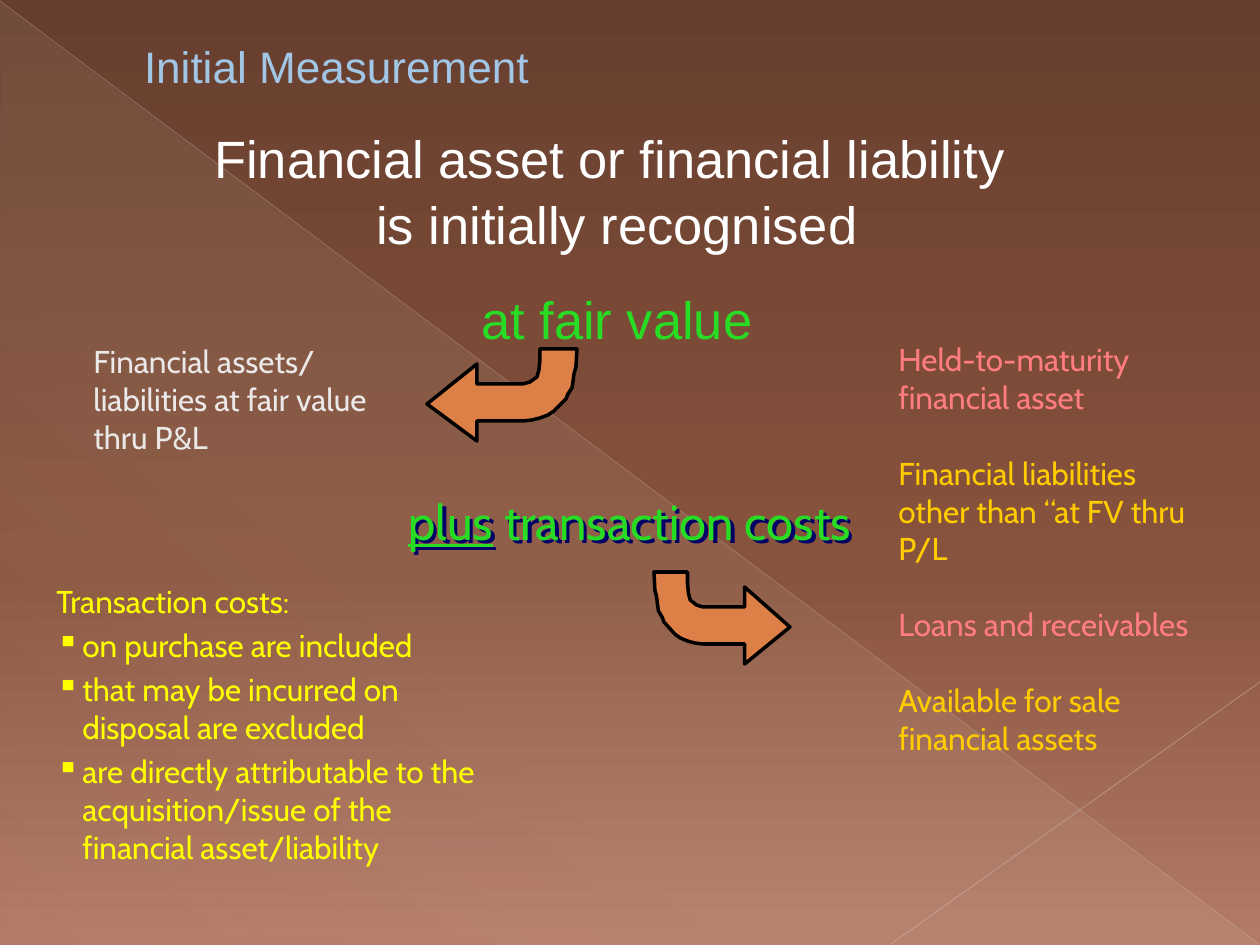
import lxml.etree
import pptx
import pptx.dml.color
import pptx.enum.shapes
import pptx.enum.text
import pptx.oxml
import pptx.oxml.ns
import pptx.util

PX = 914400 / 126
NAMESPACE = pptx.oxml.ns.nsdecls("a")
SAND, ORANGE, BLACK = "EBDDC3", "DD8047", "000000"
WHITE, PALE, BLUE = "FFFFFF", "EAE8E8", "A1C6E6"
GREEN, YELLOW, PINK, GOLD, NAVY = "28DC24", "FFFF00", "FF7C80", "FFCC00", "000066"
ALIGN = pptx.enum.text.PP_ALIGN

# Outline of a bent arrow pointing left, on a grid of 150 by 92
ARROW_GRID = (150, 92)
ARROW_OUTLINE = [
    (50, 92), (0, 55), (50, 15), (50, 35), (96, 35), (103, 33), (110, 28),
    (112, 21), (113, 11), (113, 0), (150, 0), (149, 18), (147, 25), (146, 33),
    (145, 39), (141, 45), (139, 50), (132, 57), (127, 62), (121, 66),
    (113, 69), (105, 71), (96, 72), (50, 72),
]


def emu(pixels):
    return pptx.util.Emu(round(pixels * PX))


def color(value):
    return pptx.dml.color.RGBColor.from_string(value)


def add_xml(parent, markup):
    """Append one a: element, given as '<a:name ...' markup without namespace."""
    head, tail = markup.split(" ", 1)
    element = pptx.oxml.parse_xml(f"{head} {NAMESPACE} {tail}")
    parent.append(element)
    return element


def set_gradient(fill, owner, stops, angle):
    """Give owner (bgPr or spPr) a linear gradient of (position, colour, opacity) stops."""
    fill.solid()
    solid = owner.find(pptx.oxml.ns.qn("a:solidFill"))
    marks = "".join(
        f'<a:gs pos="{position * 1000}"><a:srgbClr val="{value}">'
        f'<a:alpha val="{opacity * 1000}"/></a:srgbClr></a:gs>'
        for position, value, opacity in stops)
    gradient = add_xml(
        owner, f'<a:gradFill rotWithShape="1"><a:gsLst>{marks}</a:gsLst>'
               f'<a:lin ang="{angle * 60000}" scaled="0"/></a:gradFill>')
    owner.replace(solid, gradient)


def add_thin_line(slide, start, end, value, width, opacity):
    line = slide.shapes.add_connector(
        pptx.enum.shapes.MSO_CONNECTOR.STRAIGHT, *map(emu, start + end))
    line.line.width = pptx.util.Pt(width)
    line.line.color.rgb = color(value)
    properties = line._element.spPr
    shade = properties.find(".//" + pptx.oxml.ns.qn("a:srgbClr"))
    add_xml(shade, f'<a:alpha val="{opacity * 1000}"/>')
    add_xml(properties, "<a:effectLst />")


def add_backdrop(slide, width, height):
    background = slide.background
    fill = background.fill
    fill.solid()
    owner = slide._element.find(".//" + pptx.oxml.ns.qn("p:bgPr"))
    set_gradient(fill, owner, [(0, "673E2E", 100), (60, "88533D", 100),
                               (100, "B37B67", 100)], 90)

    triangle = slide.shapes.add_shape(
        pptx.enum.shapes.MSO_SHAPE.RIGHT_TRIANGLE,
        emu(1), emu(2), emu(width - 1), emu(height - 2))
    triangle.shadow.inherit = False
    set_gradient(triangle.fill, triangle._element.spPr,
                 [(0, SAND, 10), (70, SAND, 8), (100, SAND, 1)], 133)
    triangle.line.fill.background()

    add_thin_line(slide, (0, 1), (width - 1, height - 1), "C8BCB8", 0.39, 35)
    add_thin_line(slide, (width, 682), (891, height - 1), "CEC3BF", 0.47, 45)


def add_text(slide, box, lines, size, font="Cabin", wrap=True):
    """Place (text, colour) lines, one paragraph each, and return the text box."""
    shape = slide.shapes.add_textbox(*map(emu, box))
    frame = shape.text_frame
    frame.word_wrap = wrap
    frame.text = "\n".join(text for text, _ in lines)
    for paragraph, (_, value) in zip(frame.paragraphs, lines):
        for run in paragraph.runs:
            run.font.name = font
            run.font.size = pptx.util.Pt(size)
            run.font.color.rgb = color(value)
    return shape


def add_title(slide, box):
    shape = add_text(slide, box, [("Initial Measurement", BLUE)], 25.2, "Arial")
    shape.text_frame.vertical_anchor = pptx.enum.text.MSO_ANCHOR.MIDDLE
    shape.text_frame.margin_left = emu(80)


def add_statement(slide, box):
    shape = add_text(slide, box, [
        ("Financial asset or financial liability \vis initially recognised", WHITE),
        ("at fair value", GREEN)], 30, "Arial")
    recognition, basis = shape.text_frame.paragraphs
    recognition.alignment = basis.alignment = ALIGN.CENTER
    recognition.line_spacing = 1.05
    basis.space_before = pptx.util.Pt(18)


def add_bent_arrow(slide, box, points_right=False):
    left, top, width, height = box
    grid_width, grid_height = ARROW_GRID
    points = [
        (emu(left + (grid_width - x if points_right else x) * width / grid_width),
         emu(top + y * height / grid_height))
        for x, y in ARROW_OUTLINE]
    builder = slide.shapes.build_freeform(*points[0])
    builder.add_line_segments(points[1:], close=True)
    arrow = builder.convert_to_shape()
    arrow.shadow.inherit = False
    arrow.fill.solid()
    arrow.fill.fore_color.rgb = color(ORANGE)
    arrow.line.color.rgb = color(BLACK)
    arrow.line.width = pptx.util.Pt(2)


def add_categories(slide, box):
    shape = add_text(slide, box, [
        ("Held-to-maturity financial asset", PINK),
        ("Financial liabilities other than “at FV thru P/L", GOLD),
        ("Loans and receivables", PINK),
        ("Available for sale financial assets", GOLD)], 18)
    for paragraph in shape.text_frame.paragraphs[1:]:
        paragraph.space_before = pptx.util.Pt(21.8)


def add_plus_costs(slide, box):
    shape = add_text(slide, box, [("plus", GREEN)], 28, wrap=False)
    paragraph = shape.text_frame.paragraphs[0]
    plus = paragraph.runs[0]
    rest = paragraph.add_run()
    rest.text = " transaction costs"
    rest.font.name, rest.font.size = plus.font.name, plus.font.size
    rest.font.color.rgb = color(GREEN)
    plus.font.underline = True
    add_xml(shape._element.spPr,
            '<a:effectLst ><a:outerShdw dist="35921" dir="2700000" algn="ctr" '
            f'rotWithShape="0"><a:srgbClr val="{NAVY}"/></a:outerShdw></a:effectLst>')


def add_cost_rules(slide, box):
    texts = ["Transaction costs:", "on purchase are included",
             "that may be incurred on disposal are excluded",
             "are directly attributable to the acquisition/issue of the "
             "financial asset/liability"]
    shape = add_text(slide, box, [(text, YELLOW) for text in texts], 18)
    for index, paragraph in enumerate(shape.text_frame.paragraphs):
        paragraph.space_after = pptx.util.Pt(3.6)
        properties = paragraph._p.get_or_add_pPr()
        properties.set("marL", str(emu(26)))
        properties.set("indent", str(-emu(26)))
        if index:
            add_xml(properties, f'<a:buClr ><a:srgbClr val="{YELLOW}"/></a:buClr>')
            add_xml(properties, '<a:buChar char="▪"/>')


def main():
    width, height = 1260, 945
    presentation = pptx.Presentation()
    presentation.slide_width, presentation.slide_height = emu(width), emu(height)
    slide = presentation.slides.add_slide(presentation.slide_layouts[6])
    add_backdrop(slide, width, height)
    add_title(slide, (64, 33, 1155, 66))
    add_statement(slide, (45, 117, 1144, 686))
    add_bent_arrow(slide, (427, 349, 150, 92))
    add_bent_arrow(slide, (654, 572, 136, 92), points_right=True)
    add_text(slide, (81, 336, 318, 126),
             [("Financial assets/ liabilities at fair value thru P&L", PALE)], 18)
    add_categories(slide, (886, 334, 318, 466))
    add_plus_costs(slide, (396, 485, 496, 72))
    add_cost_rules(slide, (44, 576, 444, 301))
    presentation.save("out.pptx")


if __name__ == "__main__":
    main()
